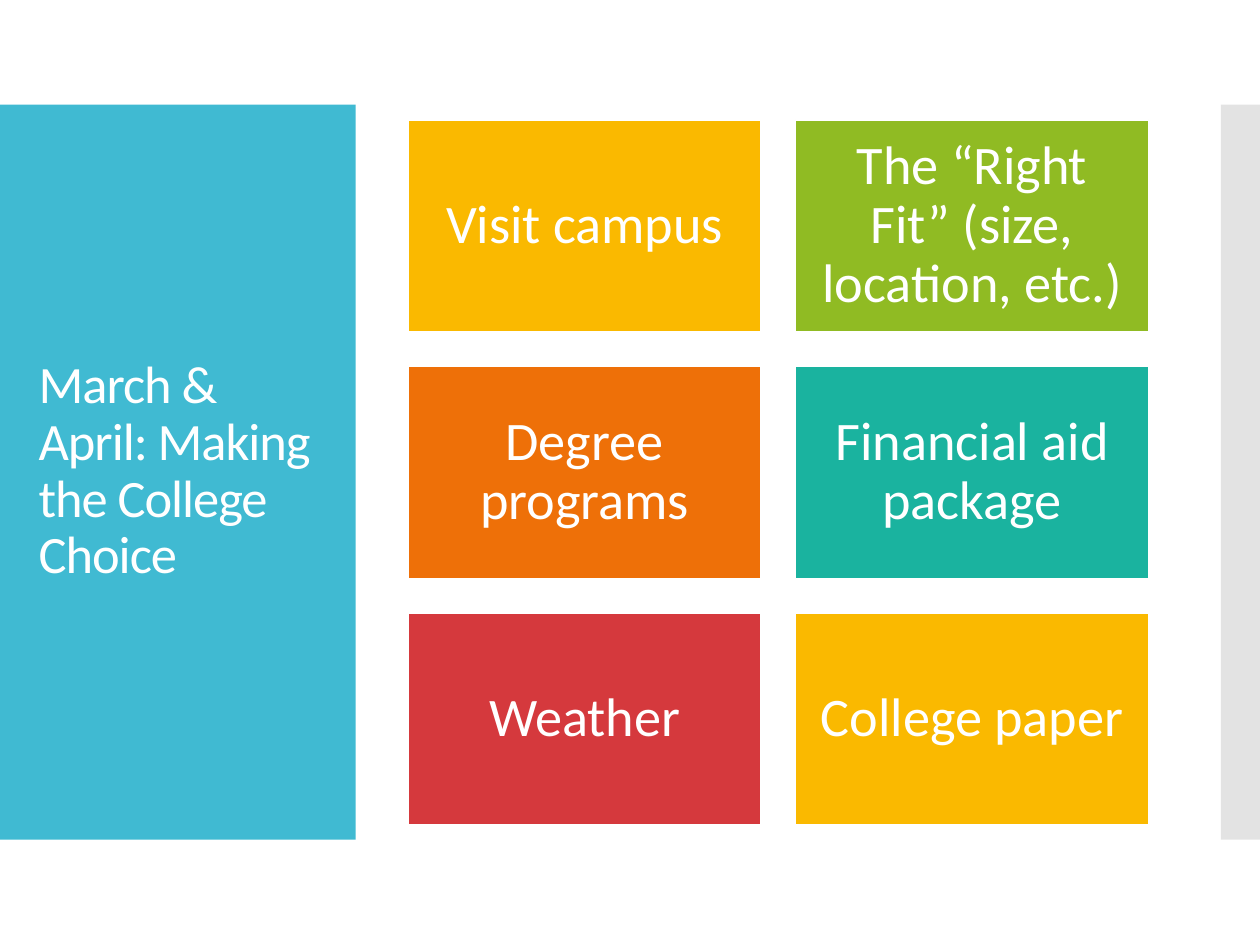
from lxml import etree
from pptx import Presentation
from pptx.dml.color import RGBColor
from pptx.enum import shapes, text
from pptx.oxml import ns
from pptx.util import Cm, Pt

TITLE = "March & April: Making the College Choice"
FACTORS = [
    ("Visit campus", "FAB900"),
    ("The “Right Fit” (size, location, etc.)", "90BB23"),
    ("Degree programs", "EE7008"),
    ("Financial aid package", "1AB39F"),
    ("Weather", "D5393D"),
    ("College paper", "FAB900"),
]
WHITE = "FFFFFF"
FONT = "Calibri"
PAGE_WIDTH, PAGE_HEIGHT = 25.4, 19.05
BAND_TOP, BAND_HEIGHT = 2.11, 14.82
PANEL_WIDTH, EDGE_LEFT = 7.17, 24.61
COLUMNS = 2
GRID_LEFT, GRID_TOP = 8.23, 2.42
TILE_WIDTH, TILE_HEIGHT = 7.11, 4.27
GAP = 0.7


def color(value):
    return RGBColor.from_string(value)


def add_rectangle(page, left, top, width, height, fill):
    box = page.shapes.add_shape(
        shapes.MSO_SHAPE.RECTANGLE, Cm(left), Cm(top), Cm(width), Cm(height)
    )
    box.shadow.inherit = False
    box.fill.solid()
    box.fill.fore_color.rgb = color(fill)
    box.line.fill.background()
    return box


def write(box, wording, size, align):
    frame = box.text_frame
    frame.word_wrap = True
    frame.vertical_anchor = text.MSO_ANCHOR.MIDDLE
    frame.text = wording
    para = frame.paragraphs[0]
    para.alignment = align
    para.line_spacing = 0.9
    span = para.runs[0]
    span.font.name = FONT
    span.font.size = Pt(size)
    span.font.color.rgb = color(WHITE)
    return span


def add_title(page):
    box = page.shapes.add_textbox(Cm(0.53), Cm(3.12), Cm(6.15), Cm(12.78))
    span = write(box, TITLE, 30, text.PP_ALIGN.LEFT)
    span.font._element.set("spc", "-60")


def add_tile(page, index, wording, fill):
    row, column = divmod(index, COLUMNS)
    left = GRID_LEFT + column * (TILE_WIDTH + GAP)
    top = GRID_TOP + row * (TILE_HEIGHT + GAP)
    box = add_rectangle(page, left, top, TILE_WIDTH, TILE_HEIGHT, fill)
    box.line.color.rgb = color(WHITE)
    box.line.width = Pt(0.85)
    frame = box.text_frame
    frame.margin_left = frame.margin_right = Cm(0.33)
    frame.margin_top = frame.margin_bottom = Cm(0.33)
    write(box, wording, 31, text.PP_ALIGN.CENTER)


def main():
    deck = Presentation()
    deck.slide_width, deck.slide_height = Cm(PAGE_WIDTH), Cm(PAGE_HEIGHT)
    page = deck.slides.add_slide(deck.slide_layouts[6])
    add_rectangle(page, 0, BAND_TOP, PANEL_WIDTH, BAND_HEIGHT, "40BAD2")
    edge = add_rectangle(
        page, EDGE_LEFT, BAND_TOP, PAGE_WIDTH - EDGE_LEFT, BAND_HEIGHT, "C8C8C8"
    )
    tint = edge._element.spPr.find(ns.qn("a:solidFill"))[0]
    etree.SubElement(tint, ns.qn("a:alpha"), val="50000")
    add_title(page)
    for index, (wording, fill) in enumerate(FACTORS):
        add_tile(page, index, wording, fill)
    deck.save("out.pptx")


if __name__ == "__main__":
    main()
